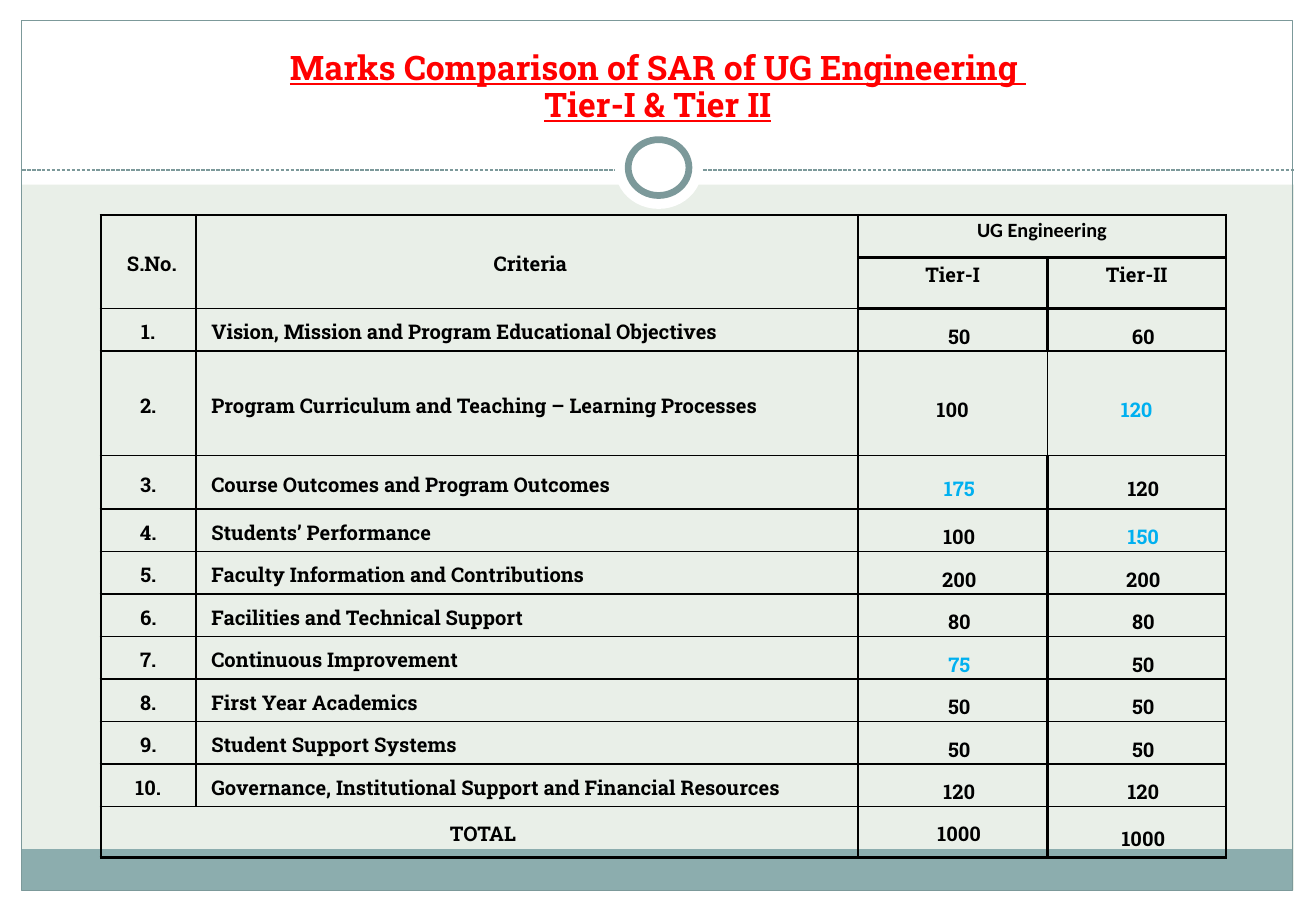
"""Build the slide comparing SAR marks of Tier-I and Tier-II engineering programs."""
from lxml import etree
from pptx import Presentation
from pptx.dml.color import RGBColor
from pptx.enum.dml import MSO_LINE
from pptx.enum.shapes import MSO_CONNECTOR, MSO_SHAPE
from pptx.enum.text import MSO_ANCHOR, PP_ALIGN
from pptx.oxml.ns import qn
from pptx.util import Inches, Pt

RECT, OVAL = MSO_SHAPE.RECTANGLE, MSO_SHAPE.OVAL
LEFT, CENTER = PP_ALIGN.LEFT, PP_ALIGN.CENTER
TOP, MIDDLE, BOTTOM = MSO_ANCHOR.TOP, MSO_ANCHOR.MIDDLE, MSO_ANCHOR.BOTTOM

SLAB, SANS = "Roboto Slab", "Calibri"
BLACK, WHITE, RED, BLUE = "000000", "FFFFFF", "FF0000", "00B0F0"
PALE, TEAL, FRAME = "E9EFE8", "8CADAE", "7C999A"

WIDTH, HEIGHT = 10.83, 7.5
TITLE = ["Marks Comparison of SAR of UG Engineering ", "Tier-I & Tier II"]
CRITERIA = [
    ("Vision, Mission and Program Educational Objectives", 50, 60),
    ("Program Curriculum and Teaching – Learning Processes", 100, 120),
    ("Course Outcomes and Program Outcomes", 175, 120),
    ("Students’ Performance", 100, 150),
    ("Faculty Information and Contributions", 200, 200),
    ("Facilities and Technical Support", 80, 80),
    ("Continuous Improvement", 75, 50),
    ("First Year Academics", 50, 50),
    ("Student Support Systems", 50, 50),
    ("Governance, Institutional Support and Financial Resources", 120, 120),
]
HIGHLIGHTS = {(3, 3), (4, 2), (5, 3), (8, 2)}
ROWS = [
    ("S.No.", "Criteria", "UG Engineering", ""),
    ("", "", "Tier-I", "Tier-II"),
    *[(f"{number}.", *entry) for number, entry in enumerate(CRITERIA, 1)],
    ("TOTAL", "", 1000, 1000),
]
LAST = len(ROWS) - 1
CURRICULUM = 3
COLUMN_WIDTHS = [0.78, 5.45, 1.56, 1.47]
ROW_HEIGHT = 0.35
TALL_ROWS = {1: 0.42, CURRICULUM: 0.86, 4: 0.44, LAST: 0.42}
MERGES = [((0, 0), (1, 0)), ((0, 1), (1, 1)), ((0, 2), (0, 3)), ((LAST, 0), (LAST, 1))]
TABLE_AT = (0.83, 1.77)

PANELS = [
    (RECT, (0, 7.33, WIDTH, 0.17), WHITE, None, 0),
    (RECT, (0, 0, WIDTH, 1.52), WHITE, None, 0),
    (RECT, (0, 0, 0.18, HEIGHT), WHITE, None, 0),
    (RECT, (10.65, 0, 0.18, HEIGHT), WHITE, None, 0),
    (RECT, (0.18, 6.99, 10.46, 0.34), TEAL, None, 0),
    (RECT, (0.18, 0.17, 10.46, 7.16), None, FRAME, 0.75),
]
RINGS = [
    (OVAL, (5.06, 1.05, 0.72, 0.67), WHITE, None, 0),
    (OVAL, (5.17, 1.15, 0.5, 0.46), WHITE, FRAME, 4),
]


def color(value):
    return RGBColor.from_string(value)


def apply(target, values):
    for name, value in values.items():
        setattr(target, name, value)


def add_span(para, text, font, size, ink, underline=None):
    span = para.add_run()
    span.text = text
    apply(span.font, {"name": font, "size": Pt(size), "bold": True, "underline": underline})
    span.font.color.rgb = color(ink)


def add_panel(page, kind, place, fill, line, weight):
    panel = page.shapes.add_shape(kind, *map(Inches, place))
    panel.shadow.inherit = False
    if fill:
        panel.fill.solid()
        panel.fill.fore_color.rgb = color(fill)
    else:
        panel.fill.background()
    if line:
        panel.line.color.rgb = color(line)
        panel.line.width = Pt(weight)
    else:
        panel.line.fill.background()


def add_divider(page):
    line = page.shapes.add_connector(
        MSO_CONNECTOR.STRAIGHT, *map(Inches, (0.18, 1.4, 10.65, 1.4)))
    line.line.color.rgb = color(FRAME)
    apply(line.line, {"width": Pt(0.75), "dash_style": MSO_LINE.SQUARE_DOT})
    etree.SubElement(line._element.spPr, qn("a:effectLst"))


def add_title(page):
    box = page.shapes.add_textbox(*map(Inches, (0.36, 0.25, 10.11, 0.83)))
    apply(box.text_frame, {"word_wrap": True, "vertical_anchor": BOTTOM})
    para = box.text_frame.paragraphs[0]
    apply(para, {"alignment": CENTER, "line_spacing": 0.92})
    for index, text in enumerate(TITLE):
        if index:
            para.add_line_break()
        add_span(para, text, SLAB, 20, RED, True)


def border_widths(row, column):
    in_header = row < 2 and column > 1
    widths = {
        "L": 1.5,
        "R": 1.5,
        "T": 1.5 if row == 0 or in_header or (row == 2 and column > 1) else 1,
        "B": 1.5 if row == LAST or in_header else 1,
    }
    if row == CURRICULUM and column > 1:
        widths["R" if column == 2 else "L"] = 1
    return widths


def set_borders(cell, widths):
    properties = cell._tc.get_or_add_tcPr()
    for side, width in widths.items():
        line = etree.SubElement(properties, qn(f"a:ln{side}"), w=str(Pt(width)))
        fill = etree.SubElement(line, qn("a:solidFill"))
        etree.SubElement(fill, qn("a:srgbClr"), val=BLACK)


def text_format(row, column):
    """Return the paragraph format, left margin and first-line indent of a cell."""
    values = {"alignment": CENTER, "line_spacing": 1.15}
    if row < 2 and column > 1:
        return values, 0, 0
    if column > 1:
        values["line_spacing"] = 1.5
        if row == LAST:
            values["space_before"] = Pt(6)
        return values, 0 if row == CURRICULUM else 0.11, 0
    values.update(space_before=Pt(3), space_after=Pt(3))
    if 1 < row < LAST:
        if column == 0:
            return values, 0.38, -0.38
        values["alignment"] = LEFT
    return values, 0.06, 0


def fill_cell(cell, row, column, text):
    set_borders(cell, border_widths(row, column))
    cell.fill.background()
    top = column > 1 and (row < 2 or (row == LAST and column == 2))
    side = Inches(0.07)
    apply(cell, {"margin_left": side, "margin_right": side, "margin_top": 0,
                 "margin_bottom": 0, "vertical_anchor": TOP if top else MIDDLE})
    if text == "":
        return
    para = cell.text_frame.paragraphs[0]
    values, margin, indent = text_format(row, column)
    apply(para, values)
    properties = para._p.get_or_add_pPr()
    properties.set("marL", str(Inches(margin)))
    properties.set("indent", str(Inches(indent)))
    ink = BLUE if (row, column) in HIGHLIGHTS else BLACK
    add_span(para, str(text), SANS if (row, column) == (0, 2) else SLAB, 12, ink)


def add_marks_table(page):
    heights = [TALL_ROWS.get(row, ROW_HEIGHT) for row in range(len(ROWS))]
    size = (sum(COLUMN_WIDTHS), sum(heights))
    table = page.shapes.add_table(
        len(ROWS), len(COLUMN_WIDTHS), *map(Inches, TABLE_AT + size)).table
    apply(table, {"first_row": False, "horz_banding": False})
    for column, width in zip(table.columns, COLUMN_WIDTHS):
        column.width = Inches(width)
    for row, height in zip(table.rows, heights):
        row.height = Inches(height)
    for start, end in MERGES:
        table.cell(*start).merge(table.cell(*end))
    for row, texts in enumerate(ROWS):
        for column, text in enumerate(texts):
            fill_cell(table.cell(row, column), row, column, text)


def main():
    deck = Presentation()
    apply(deck, {"slide_width": Inches(WIDTH), "slide_height": Inches(HEIGHT)})
    page = deck.slides.add_slide(deck.slide_layouts[6])
    page.background.fill.solid()
    page.background.fill.fore_color.rgb = color(PALE)
    for panel in PANELS:
        add_panel(page, *panel)
    add_divider(page)
    for ring in RINGS:
        add_panel(page, *ring)
    add_title(page)
    add_marks_table(page)
    deck.save("out.pptx")


if __name__ == "__main__":
    main()
